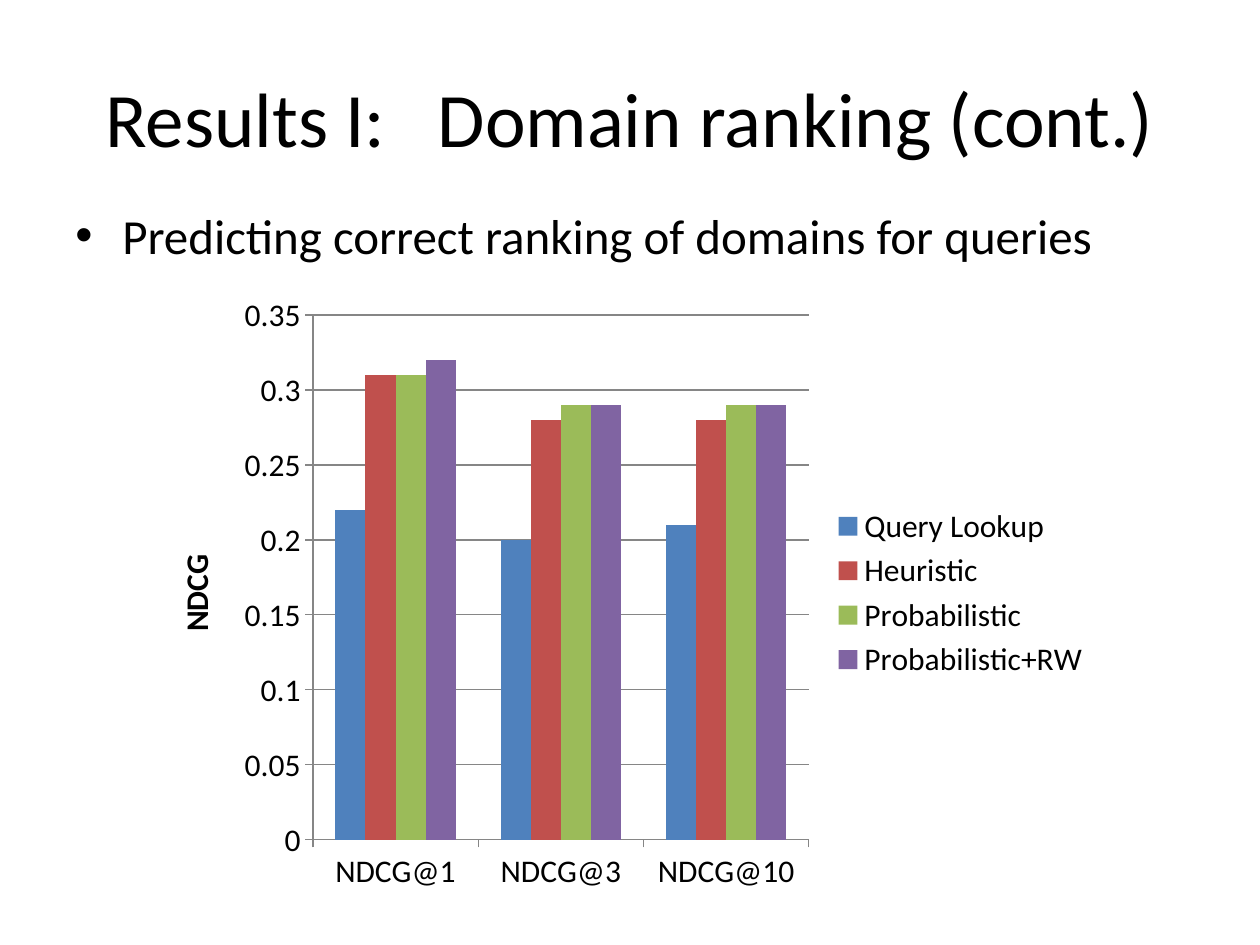
from dataclasses import dataclass

from lxml.etree import SubElement
from pptx import Presentation
from pptx.chart.data import CategoryChartData
from pptx.dml.color import RGBColor
from pptx.enum.chart import XL_CHART_TYPE as ChartType
from pptx.enum.chart import XL_LEGEND_POSITION as LegendPosition
from pptx.enum.chart import XL_TICK_MARK as TickMark
from pptx.enum.text import MSO_ANCHOR as Anchor
from pptx.enum.text import PP_ALIGN as Align
from pptx.oxml.ns import qn
from pptx.util import Emu, Pt

EMU_PER_PX = 914400 / 126


@dataclass(frozen=True)
class Theme:
    font: str = "Calibri"
    text: str = "000000"
    axis: str = "868686"
    title_size: int = 44
    body_size: int = 28
    chart_size: int = 18


@dataclass(frozen=True)
class Box:
    left: int
    top: int
    width: int
    height: int

    def emu(self) -> tuple:
        return tuple(px(n) for n in (self.left, self.top, self.width, self.height))


@dataclass(frozen=True)
class Series:
    name: str
    values: tuple
    color: str


THEME = Theme()
TITLE_BOX = Box(63, 38, 1134, 157)
BODY_BOX = Box(63, 199, 1134, 645)
CHART_BOX = Box(148, 283, 955, 620)
PLOT_BOX = Box(313, 315, 496, 525)
BULLET_INDENT = 47

CATEGORIES = ("NDCG@1", "NDCG@3", "NDCG@10")
SERIES = (
    Series("Query Lookup", (0.22, 0.2, 0.21), "4F81BD"),
    Series("Heuristic", (0.31, 0.28, 0.28), "C0504D"),
    Series("Probabilistic", (0.31, 0.29, 0.29), "9BBB59"),
    Series("Probabilistic+RW", (0.32, 0.29, 0.29), "8064A2"),
)


def px(length: int) -> Emu:
    return Emu(round(length * EMU_PER_PX))


def style_font(font, size: int, bold: bool = False) -> None:
    font.name = THEME.font
    font.size = Pt(size)
    font.bold = bold
    font.color.rgb = RGBColor.from_string(THEME.text)


def add_text(slide, box: Box, text: str, size: int, anchor: Anchor, align: Align):
    """Add a one-paragraph text box and return its paragraph."""
    text_frame = slide.shapes.add_textbox(*box.emu()).text_frame
    text_frame.word_wrap = True
    text_frame.vertical_anchor = anchor
    text_frame.text = text
    paragraph = text_frame.paragraphs[0]
    paragraph.alignment = align
    style_font(paragraph.runs[0].font, size)
    return paragraph


def add_bullet(paragraph) -> None:
    properties = paragraph._p.get_or_add_pPr()
    indent = px(BULLET_INDENT)
    properties.set("marL", str(indent))
    properties.set("indent", str(-indent))
    space_before = SubElement(properties, qn("a:spcBef"))
    SubElement(space_before, qn("a:spcPct"), val="20000")
    SubElement(properties, qn("a:buFont"), typeface="Arial")
    SubElement(properties, qn("a:buChar"), char="•")


def place_plot(chart, chart_box: Box, plot_box: Box) -> None:
    """Fix the inner plot area, given as slide pixels."""
    plot_area = chart._chartSpace.chart.plotArea
    for old_layout in plot_area.findall(qn("c:layout")):
        plot_area.remove(old_layout)
    layout = plot_area.makeelement(qn("c:layout"), {})
    plot_area.insert(0, layout)
    manual = SubElement(layout, qn("c:manualLayout"))
    settings = {
        "layoutTarget": "inner",
        "xMode": "edge",
        "yMode": "edge",
        "x": (plot_box.left - chart_box.left) / chart_box.width,
        "y": (plot_box.top - chart_box.top) / chart_box.height,
        "w": plot_box.width / chart_box.width,
        "h": plot_box.height / chart_box.height,
    }
    for name, value in settings.items():
        SubElement(manual, qn(f"c:{name}"), val=str(value))


def style_line(line) -> None:
    line.color.rgb = RGBColor.from_string(THEME.axis)
    line.width = Pt(0.75)


def style_axes(chart) -> None:
    for axis in (chart.category_axis, chart.value_axis):
        axis.major_tick_mark = TickMark.OUTSIDE
        axis.minor_tick_mark = TickMark.NONE
        style_font(axis.tick_labels.font, THEME.chart_size)
        style_line(axis.format.line)
    value_axis = chart.value_axis
    value_axis.minimum_scale = 0
    value_axis.maximum_scale = 0.35
    value_axis.major_unit = 0.05
    value_axis.has_major_gridlines = True
    style_line(value_axis.major_gridlines.format.line)
    title_frame = value_axis.axis_title.text_frame
    title_frame.text = "NDCG"
    style_font(title_frame.paragraphs[0].runs[0].font, THEME.chart_size, bold=True)


def add_ranking_chart(slide) -> None:
    data = CategoryChartData()
    data.categories = CATEGORIES
    for series in SERIES:
        data.add_series(series.name, series.values)
    frame = slide.shapes.add_chart(ChartType.COLUMN_CLUSTERED, *CHART_BOX.emu(), data)
    chart = frame.chart
    chart.has_title = False
    style_font(chart.font, THEME.chart_size)
    chart.has_legend = True
    chart.legend.position = LegendPosition.RIGHT
    chart.legend.include_in_layout = False
    style_font(chart.legend.font, THEME.chart_size)

    plot = chart.plots[0]
    plot.vary_by_categories = False
    plot.gap_width = 150
    plot.overlap = 0
    for columns, series in zip(plot.series, SERIES):
        columns.format.fill.solid()
        columns.format.fill.fore_color.rgb = RGBColor.from_string(series.color)
    style_axes(chart)
    place_plot(chart, CHART_BOX, PLOT_BOX)


def main() -> None:
    presentation = Presentation()
    presentation.slide_width = px(1260)
    presentation.slide_height = px(945)
    slide = presentation.slides.add_slide(presentation.slide_layouts[6])
    add_text(slide, TITLE_BOX, "Results I:   Domain ranking (cont.)",
             THEME.title_size, Anchor.MIDDLE, Align.CENTER)
    body = add_text(slide, BODY_BOX, "Predicting correct ranking of domains for queries",
                    THEME.body_size, Anchor.TOP, Align.LEFT)
    add_bullet(body)
    add_ranking_chart(slide)
    presentation.save("out.pptx")


if __name__ == "__main__":
    main()
